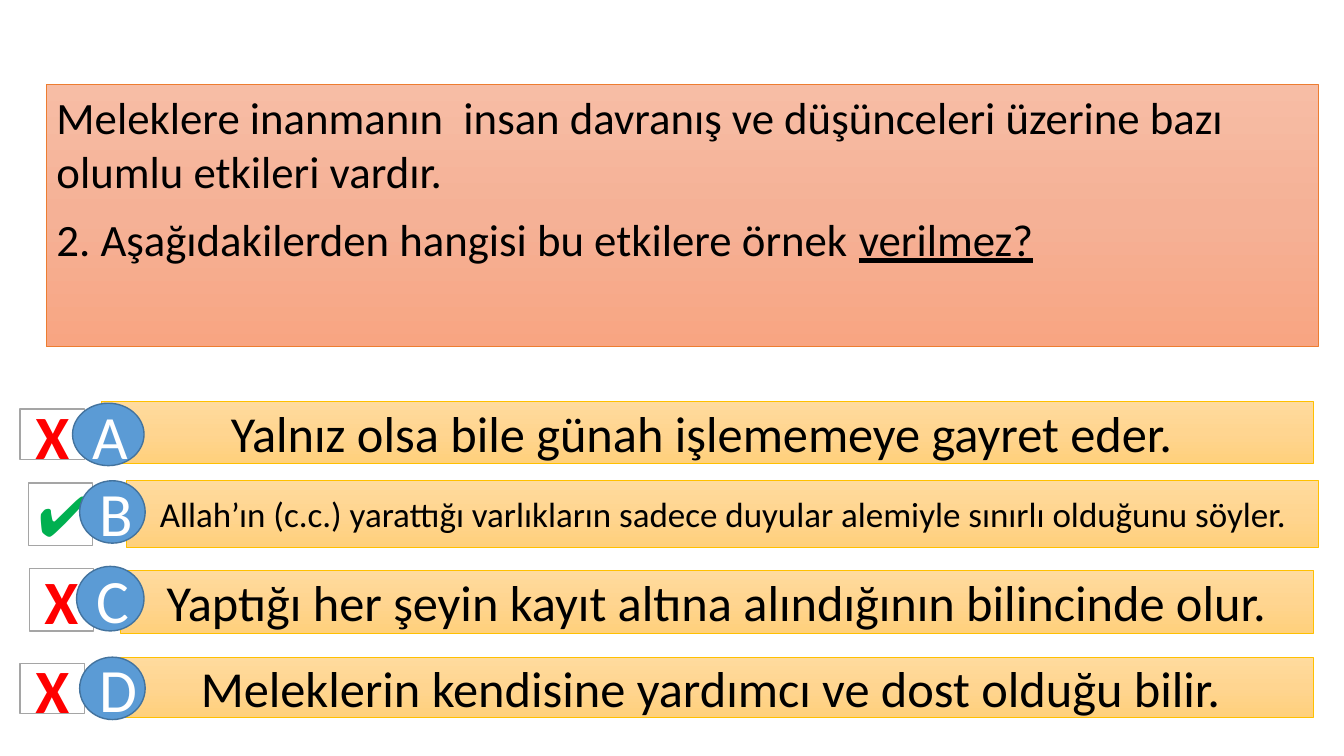
"""Build a quiz slide with one question and four marked answers."""
from copy import deepcopy
from dataclasses import dataclass

from lxml.etree import SubElement
from pptx import Presentation
from pptx.dml.color import RGBColor
from pptx.enum.shapes import MSO_SHAPE
from pptx.enum.text import MSO_ANCHOR, MSO_AUTO_SIZE, PP_ALIGN
from pptx.oxml.ns import qn
from pptx.shapes.autoshape import Shape
from pptx.slide import Slide
from pptx.util import Pt


@dataclass(frozen=True)
class Theme:
    font: str = "Calibri"
    text: str = "000000"
    question_fill: tuple[str, ...] = ("F7BDA5", "F5B196", "F8A582")
    question_line: str = "ED7D31"
    answer_fill: tuple[str, ...] = ("FFDB9E", "FFD590", "FFD07C")
    answer_line: str = "FFC000"
    mark_fill: str = "FFFFFF"
    mark_line: str = "A5A5A5"
    wrong: str = "FF0000"
    right: str = "00B050"
    disc_fill: str = "5B9BD5"
    disc_line: str = "43739E"
    disc_text: str = "FFFFFF"
    question_size: float = 32
    answer_size: float = 36
    long_answer_size: float = 25
    letter_size: float = 44
    tick_size: float = 40
    thin: float = 0.5
    thick: float = 1


@dataclass(frozen=True)
class Area:
    left: float
    top: float
    width: float
    height: float


@dataclass(frozen=True)
class Answer:
    letter: str
    text: str
    bar: Area
    mark: Area
    disc: Area
    correct: bool = False
    left_inset: float = 7.2
    right_inset: float = 7.2


THEME = Theme()
QUESTION_AREA = Area(33.1, 60.5, 908.6, 187.2)
QUESTION = (
    ("Meleklere inanmanın  insan davranış ve düşünceleri üzerine bazı olumlu etkileri vardır.",),
    ("2. Aşağıdakilerden hangisi bu etkilere örnek ", "verilmez?"),
)
ANSWERS = (
    Answer("A", "Yalnız olsa bile günah işlememeye gayret eder.",
           Area(72.7, 286.6, 865.4, 44.6), Area(14.4, 292.3, 46.1, 36),
           Area(51.8, 288, 51.1, 44.6), right_inset=15.2),
    Answer("B", "Allah’ın (c.c.) yarattığı varlıkların sadece duyular alemiyle sınırlı olduğunu söyler.",
           Area(90, 343.4, 851.8, 47.5), Area(20.2, 344.9, 46.1, 44.6),
           Area(56.9, 343.4, 46.8, 44.6), correct=True, left_inset=24.2),
    Answer("C", "Yaptığı her şeyin kayıt altına alındığının bilincinde olur.",
           Area(85.7, 407.5, 852.5, 44.6), Area(20.9, 406.1, 46.1, 44.6),
           Area(54.7, 404.6, 48.2, 46.1)),
    Answer("D", "Meleklerin kendisine yardımcı ve dost olduğu bilir.",
           Area(85.7, 469.4, 852.5, 43.2), Area(14.4, 473.8, 46.1, 36),
           Area(56.9, 469.4, 46.8, 44.6), right_inset=15.2),
)


def place(box: Shape, area: Area) -> None:
    box.left, box.top = Pt(area.left), Pt(area.top)
    box.width, box.height = Pt(area.width), Pt(area.height)


def paint(box: Shape, colours: tuple[str, ...], line: str, weight: float) -> None:
    if len(colours) == 1:
        box.fill.solid()
        box.fill.fore_color.rgb = RGBColor.from_string(colours[0])
    else:
        box.fill.gradient()
        box.fill.gradient_angle = 270
        stops = box.element.spPr.find(".//" + qn("a:gsLst"))
        while len(stops) < len(colours):
            stops.append(deepcopy(stops[0]))
        for index, (stop, colour) in enumerate(zip(box.fill.gradient_stops, colours)):
            stop.position = index / (len(colours) - 1)
            stop.color.rgb = RGBColor.from_string(colour)
    box.line.color.rgb = RGBColor.from_string(line)
    box.line.width = Pt(weight)


def format_text(box: Shape, size: float, colour: str, bold: bool = False) -> None:
    for para in box.text_frame.paragraphs:
        for span in para.runs:
            span.font.name = THEME.font
            span.font.size = Pt(size)
            span.font.bold = bold
            span.font.color.rgb = RGBColor.from_string(colour)


def add_box(page: Slide, kind: MSO_SHAPE, area: Area, text: str) -> Shape:
    box = page.shapes.add_shape(kind, 0, 0, 0, 0)
    place(box, area)
    box.shadow.inherit = False
    box.text_frame.text = text
    box.text_frame.vertical_anchor = MSO_ANCHOR.MIDDLE
    box.text_frame.paragraphs[0].alignment = PP_ALIGN.CENTER
    return box


def fill_question(box: Shape) -> None:
    place(box, QUESTION_AREA)
    paint(box, THEME.question_fill, THEME.question_line, THEME.thin)
    frame = box.text_frame
    frame.text = "\n".join(spans[0] for spans in QUESTION)
    frame.auto_size = MSO_AUTO_SIZE.NONE
    frame.vertical_anchor = MSO_ANCHOR.TOP
    for para, spans in zip(frame.paragraphs, QUESTION):
        for text in spans[1:]:
            span = para.add_run()
            span.text = text
            span.font.underline = True
        para.space_before = Pt(10)
        properties = para._p.get_or_add_pPr()
        properties.set("marL", "0")
        properties.set("indent", "0")
        SubElement(properties, qn("a:buNone"))
    format_text(box, THEME.question_size, THEME.text)


def add_bar(page: Slide, answer: Answer) -> None:
    box = add_box(page, MSO_SHAPE.RECTANGLE, answer.bar, answer.text)
    paint(box, THEME.answer_fill, THEME.answer_line, THEME.thin)
    box.text_frame.margin_left = Pt(answer.left_inset)
    box.text_frame.margin_right = Pt(answer.right_inset)
    if answer.correct:
        box.text_frame.paragraphs[0].alignment = PP_ALIGN.LEFT
    size = THEME.long_answer_size if answer.correct else THEME.answer_size
    format_text(box, size, THEME.text)


def add_mark(page: Slide, answer: Answer) -> None:
    box = add_box(page, MSO_SHAPE.RECTANGLE, answer.mark, "✔" if answer.correct else "X")
    paint(box, (THEME.mark_fill,), THEME.mark_line, THEME.thick)
    if answer.correct:
        format_text(box, THEME.tick_size, THEME.right)
    else:
        format_text(box, THEME.letter_size, THEME.wrong, bold=True)


def add_disc(page: Slide, answer: Answer) -> None:
    box = add_box(page, MSO_SHAPE.OVAL, answer.disc, answer.letter)
    paint(box, (THEME.disc_fill,), THEME.disc_line, THEME.thick)
    format_text(box, THEME.letter_size, THEME.disc_text)


def main() -> None:
    deck = Presentation()
    deck.slide_width, deck.slide_height = Pt(960), Pt(540)
    page = deck.slides.add_slide(deck.slide_layouts[1])
    title = page.shapes.title.element
    title.getparent().remove(title)
    fill_question(page.placeholders[1])
    for add_part in (add_bar, add_mark, add_disc):
        for answer in ANSWERS:
            add_part(page, answer)
    deck.save("out.pptx")


if __name__ == "__main__":
    main()
